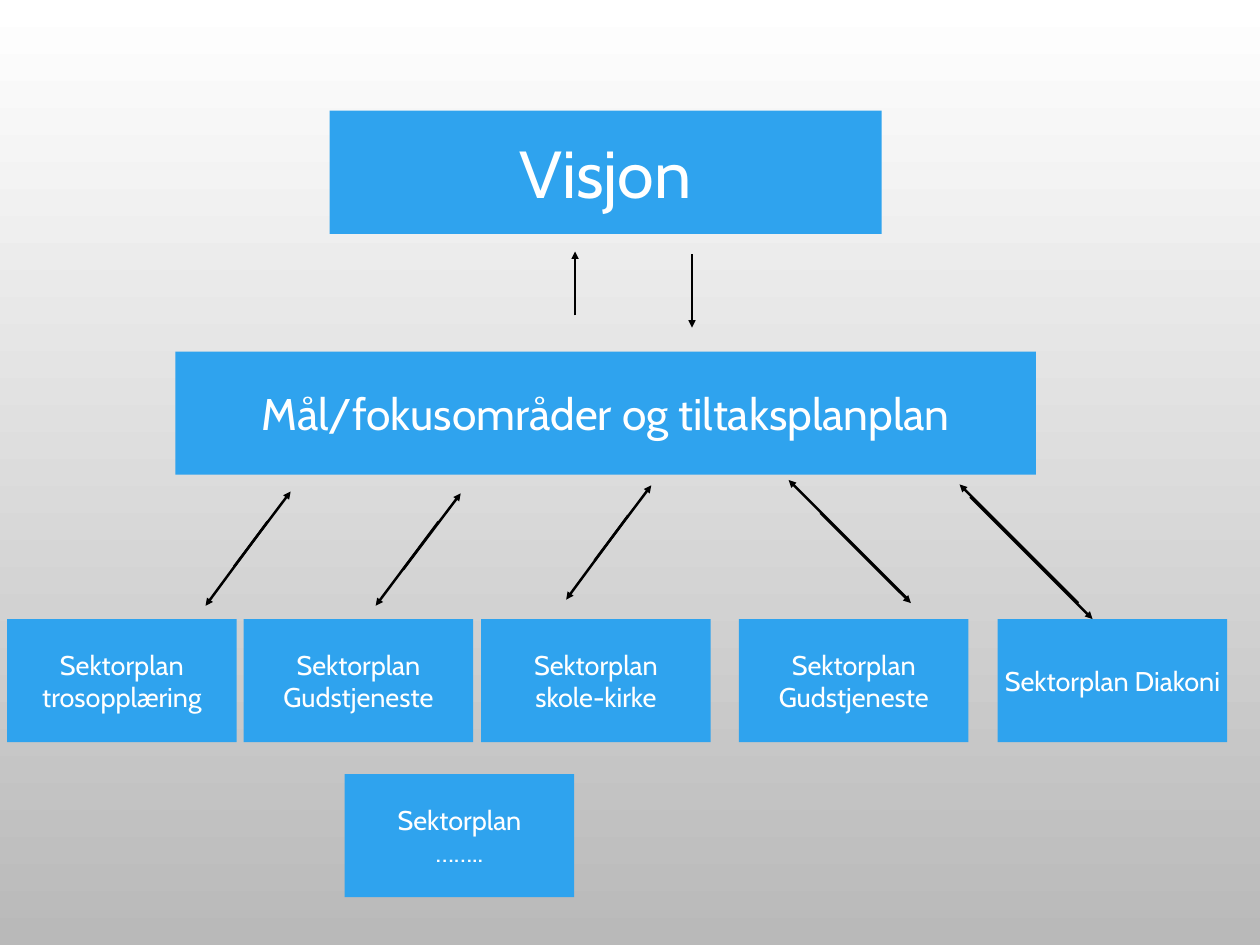
import dataclasses

import lxml.etree
import pptx
import pptx.dml.color
import pptx.enum.shapes
import pptx.enum.text
import pptx.oxml.ns
import pptx.util

Inches = pptx.util.Inches


@dataclasses.dataclass(frozen=True)
class Theme:
    font: str = "Cabin"
    box: str = "2FA3EE"
    text: str = "FFFFFF"
    arrow: str = "000000"
    background_top: str = "FFFFFF"
    background_bottom: str = "B9B9B9"
    vision_size: int = 54
    goals_size: int = 36
    sector_size: int = 22
    arrow_width: int = 2
    inset: float = 0.06


@dataclasses.dataclass(frozen=True)
class Box:
    left: float
    top: float
    width: float
    height: float


THEME = Theme()
BOX_HEIGHT = 1.39
SECTOR_WIDTH = 2.59

SECTORS = [
    (0, 0, ["Sektorplan trosopplæring"]),
    (2.67, 0, ["Sektorplan Gudstjeneste"]),
    (5.35, 0, ["Sektorplan", "skole-kirke"]),
    (8.26, 0, ["Sektorplan Gudstjeneste"]),
    (11.18, 0, ["Sektorplan Diakoni"]),
    (3.81, 1.75, ["Sektorplan", "…….."]),
]

VISION_ARROWS = [
    ((1.32, 0.03), (1.32, 0.86)),
    ((0, 0.72), (0, 0)),
]

SECTOR_ARROWS = [
    ((8.63, 0.19), (10.01, 1.57)),
    ((9.85, 1.39), (8.51, 0.05)),
    ((6.94, 0.37), (7.96, 1.39)),
    ((7.92, 1.34), (6.58, 0)),
    ((4.77, 0.4), (4.07, 1.35)),
    ((4.39, 0.91), (5.03, 0.06)),
    ((2.63, 0.47), (1.92, 1.42)),
    ((2.23, 1.01), (2.88, 0.15)),
    ((0.7, 0.47), (0, 1.42)),
    ((0.32, 0.98), (0.96, 0.13)),
]


def rgb(value):
    return pptx.dml.color.RGBColor.from_string(value)


def write_text(shape, lines, *, size, color=THEME.text, font=THEME.font):
    frame = shape.text_frame
    frame.word_wrap = True
    frame.vertical_anchor = pptx.enum.text.MSO_ANCHOR.MIDDLE
    frame.margin_left = frame.margin_right = Inches(THEME.inset)
    frame.margin_top = frame.margin_bottom = Inches(THEME.inset)
    frame.text = "\n".join(lines)
    for paragraph in frame.paragraphs:
        paragraph.alignment = pptx.enum.text.PP_ALIGN.CENTER
        for run in paragraph.runs:
            run.font.name = font
            run.font.size = pptx.util.Pt(size)
            run.font.color.rgb = rgb(color)


def add_plan_box(slide, box, lines, size):
    shape = slide.shapes.add_shape(
        pptx.enum.shapes.MSO_SHAPE.RECTANGLE,
        Inches(box.left), Inches(box.top), Inches(box.width), Inches(box.height),
    )
    shape.shadow.inherit = False
    shape.fill.solid()
    shape.fill.fore_color.rgb = rgb(THEME.box)
    shape.line.fill.background()
    write_text(shape, lines, size=size)


def add_arrow(slide, start, end):
    connector = slide.shapes.add_connector(
        pptx.enum.shapes.MSO_CONNECTOR.STRAIGHT,
        *(Inches(value) for value in (*start, *end)),
    )
    connector.line.color.rgb = rgb(THEME.arrow)
    connector.line.width = pptx.util.Pt(THEME.arrow_width)
    qualified = pptx.oxml.ns.qn
    outline = connector.line._get_or_add_ln()
    lxml.etree.SubElement(outline, qualified("a:tailEnd"), type="triangle")
    lxml.etree.SubElement(connector._element.spPr, qualified("a:effectLst"))


def add_arrows(slide, box, arrows):
    for arrow in arrows:
        start, end = [(box.left + x, box.top + y) for x, y in arrow]
        add_arrow(slide, start, end)


def add_sectors(slide, box):
    for left, top, lines in SECTORS:
        sector = Box(box.left + left, box.top + top, SECTOR_WIDTH, BOX_HEIGHT)
        add_plan_box(slide, sector, lines, THEME.sector_size)


def paint_background(slide):
    fill = slide.background.fill
    fill.gradient()
    fill.gradient_angle = 270
    colors = (THEME.background_top, THEME.background_bottom)
    for position, (stop, color) in enumerate(zip(fill.gradient_stops, colors)):
        stop.position = position
        stop.color.rgb = rgb(color)


def main():
    presentation = pptx.Presentation()
    presentation.slide_width = Inches(14.22)
    presentation.slide_height = Inches(10.67)
    slide = presentation.slides.add_slide(presentation.slide_layouts[6])
    paint_background(slide)
    add_plan_box(slide, Box(3.72, 1.25, 6.23, BOX_HEIGHT), ["Visjon"], THEME.vision_size)
    add_plan_box(
        slide, Box(1.98, 3.97, 9.71, BOX_HEIGHT),
        ["Mål/fokusområder og tiltaksplanplan"], THEME.goals_size,
    )
    add_sectors(slide, Box(0.08, 6.99, 13.77, 3.14))
    add_arrows(slide, Box(2.32, 5.42, 10.01, 1.57), SECTOR_ARROWS)
    add_arrows(slide, Box(6.49, 2.84, 1.32, 0.86), VISION_ARROWS)
    presentation.save("out.pptx")


if __name__ == "__main__":
    main()
